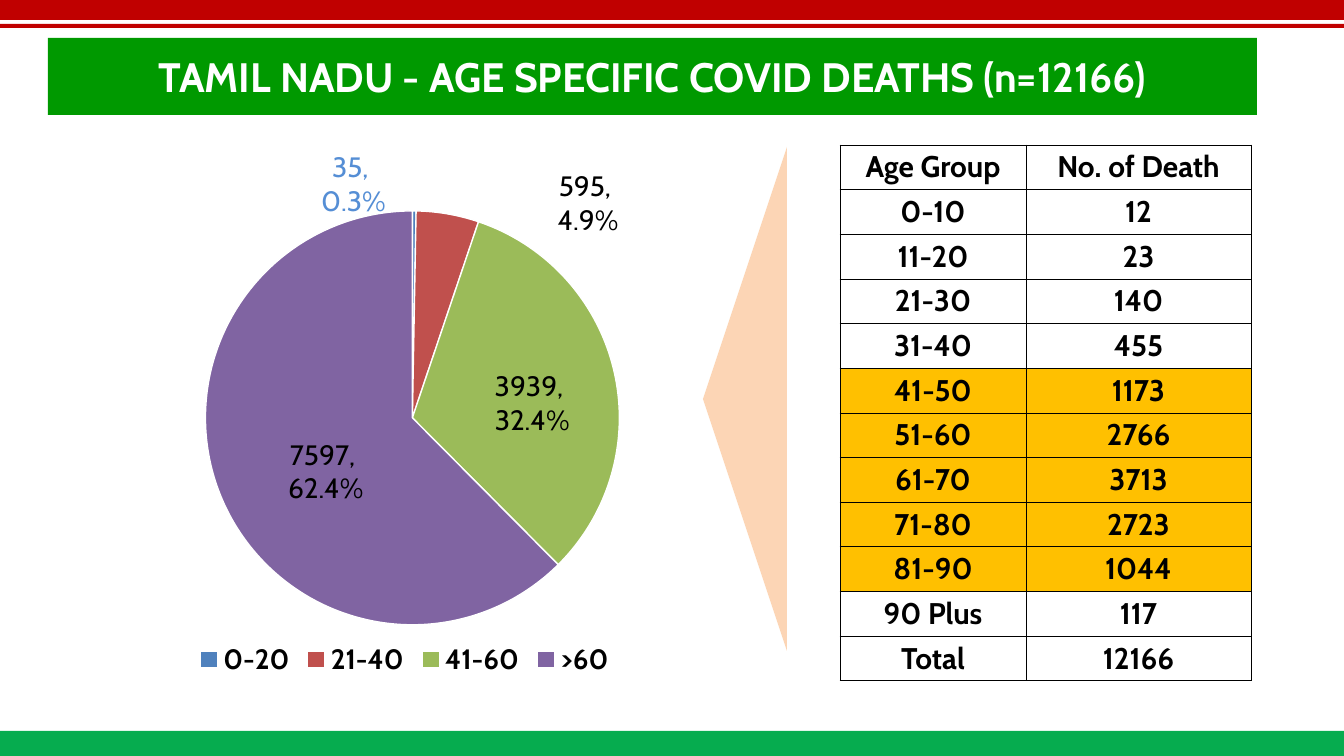
import pptx
import pptx.util
from lxml import etree
from pptx.chart.data import CategoryChartData
from pptx.dml.color import RGBColor
from pptx.enum.chart import XL_CHART_TYPE, XL_LABEL_POSITION, XL_LEGEND_POSITION
from pptx.enum.shapes import MSO_SHAPE
from pptx.enum.text import MSO_ANCHOR, PP_ALIGN
from pptx.oxml import parse_xml
from pptx.oxml.ns import nsdecls, qn

SCALE = 914400 / 134.4
FONT = "Cabin"
BLACK = RGBColor(0x00, 0x00, 0x00)
WHITE = RGBColor(0xFF, 0xFF, 0xFF)
RED = RGBColor(0xC0, 0x00, 0x00)
FOOTER_GREEN = RGBColor(0x06, 0xAC, 0x4F)
TITLE_GREEN = RGBColor(0x00, 0x99, 0x00)
AMBER = RGBColor(0xFF, 0xC0, 0x00)
PEACH = RGBColor(0xFC, 0xD5, 0xB5)
LABEL_BLUE = RGBColor(0x55, 0x8E, 0xD5)

CHART_WIDTH, CHART_HEIGHT = 683, 535
SLICES = [
    ("0-20", 35, "0.3%", RGBColor(0x4F, 0x81, 0xBD), LABEL_BLUE, (-60, -130)),
    ("21-40", 595, "4.9%", RGBColor(0xC0, 0x50, 0x4D), BLACK, (158, -112)),
    ("41-60", 3939, "32.4%", RGBColor(0x9B, 0xBB, 0x59), BLACK, (19, 9)),
    (">60", 7597, "62.4%", RGBColor(0x80, 0x64, 0xA2), BLACK, (9, 15)),
]
AGE_ROWS = [
    ("Age Group", "No. of Death"),
    ("0-10", "12"),
    ("11-20", "23"),
    ("21-30", "140"),
    ("31-40", "455"),
    ("41-50", "1173"),
    ("51-60", "2766"),
    ("61-70", "3713"),
    ("71-80", "2723"),
    ("81-90", "1044"),
    ("90 Plus", "117"),
    ("Total", "12166"),
]
HIGHLIGHTED_ROWS = range(5, 10)


def px(length):
    return round(length * SCALE)


def set_font(font, size, color, bold=True):
    font.name = FONT
    font.size = pptx.util.Pt(size)
    font.bold = bold
    font.color.rgb = color


def add_filled_shape(slide, kind, left, top, width, height, color):
    shape = slide.shapes.add_shape(kind, px(left), px(top), px(width), px(height))
    shape.shadow.inherit = False
    shape.fill.solid()
    shape.fill.fore_color.rgb = color
    shape.line.fill.background()
    return shape


def write_centered(text_frame, text, size, color):
    text_frame.text = text
    paragraph = text_frame.paragraphs[0]
    paragraph.alignment = PP_ALIGN.CENTER
    set_font(paragraph.font, size, color)


def add_title(slide, text):
    title = add_filled_shape(slide, MSO_SHAPE.RECTANGLE, 48, 38, 1209, 77, TITLE_GREEN)
    title.text_frame.vertical_anchor = MSO_ANCHOR.MIDDLE
    write_centered(title.text_frame, text, 22, WHITE)


def add_borders(cell):
    properties = cell._tc.get_or_add_tcPr()
    for side in ("lnL", "lnR", "lnT", "lnB"):
        line = etree.SubElement(properties, qn(f"a:{side}"), w="6350")
        fill = etree.SubElement(line, qn("a:solidFill"))
        etree.SubElement(fill, qn("a:srgbClr"), val=str(BLACK))


def add_age_table(slide):
    frame = slide.shapes.add_table(len(AGE_ROWS), 2, px(840), px(145), px(411), px(536))
    table = frame.table
    table.first_row = False
    table.horz_banding = False
    for column, width in zip(table.columns, (186, 225)):
        column.width = px(width)
    for row_index, texts in enumerate(AGE_ROWS):
        for column_index, text in enumerate(texts):
            cell = table.cell(row_index, column_index)
            cell.margin_left = cell.margin_right = 0
            cell.margin_top = cell.margin_bottom = 0
            cell.vertical_anchor = MSO_ANCHOR.MIDDLE
            write_centered(cell.text_frame, text, 16, BLACK)
            add_borders(cell)
            if row_index in HIGHLIGHTED_ROWS:
                cell.fill.solid()
                cell.fill.fore_color.rgb = AMBER
            else:
                cell.fill.background()


def manual_layout(**settings):
    items = "".join(f'<c:{name} val="{value}"/>' for name, value in settings.items())
    return parse_xml(
        f'<c:layout {nsdecls("c")}><c:manualLayout>{items}</c:manualLayout></c:layout>'
    )


def place_plot(chart):
    plot_area = chart._chartSpace.chart.plotArea
    for layout in plot_area.findall(qn("c:layout")):
        plot_area.remove(layout)
    plot_area.insert(0, manual_layout(
        layoutTarget="inner", xMode="edge", yMode="edge",
        x=142 / CHART_WIDTH, y=64 / CHART_HEIGHT,
        w=415 / CHART_WIDTH, h=414 / CHART_HEIGHT,
    ))


def show_labels(series):
    labels = series.data_labels
    labels.show_value = True
    labels.show_percentage = True
    labels.position = XL_LABEL_POSITION.CENTER
    for leader_lines in labels._element.findall(qn("c:showLeaderLines")):
        leader_lines.set("val", "0")


def label_slice(point, text, color, offset):
    label = point.data_label
    label.text_frame.text = text
    for paragraph in label.text_frame.paragraphs:
        for run in paragraph.runs:
            set_font(run.font, 15, color, bold=False)
    label.position = XL_LABEL_POSITION.CENTER
    label._dLbl.find(qn("c:showPercent")).set("val", "1")
    x, y = offset
    label._dLbl.insert(1, manual_layout(x=x / CHART_WIDTH, y=y / CHART_HEIGHT))


def add_age_pie(slide):
    data = CategoryChartData(number_format="0")
    data.categories = [name for name, *_ in SLICES]
    data.add_series("Series 1", [value for _, value, *_ in SLICES])
    chart = slide.shapes.add_chart(
        XL_CHART_TYPE.PIE, px(63), px(147), px(CHART_WIDTH), px(CHART_HEIGHT), data
    ).chart
    chart.has_title = False
    set_font(chart.font, 15, BLACK)
    chart.has_legend = True
    chart.legend.position = XL_LEGEND_POSITION.BOTTOM
    chart.legend.include_in_layout = False
    place_plot(chart)
    plot = chart.plots[0]
    plot.vary_by_categories = True
    series = plot.series[0]
    show_labels(series)
    for index, (_, value, share, fill, label_color, offset) in enumerate(SLICES):
        point = series.points[index]
        point.format.fill.solid()
        point.format.fill.fore_color.rgb = fill
        point.format.line.color.rgb = WHITE
        point.format.line.width = pptx.util.Pt(0.75)
        label_slice(point, f"{value}, \n{share}", label_color, offset)


def add_pointer(slide):
    pointer = add_filled_shape(
        slide, MSO_SHAPE.ISOSCELES_TRIANGLE, 493, 357, 504, 84, PEACH
    )
    pointer.rotation = 270


def main():
    presentation = pptx.Presentation()
    presentation.slide_width = px(1344)
    presentation.slide_height = px(756)
    slide = presentation.slides.add_slide(presentation.slide_layouts[6])
    for top, height, color in ((731, 25, FOOTER_GREEN), (0, 20, RED), (24, 4, RED)):
        add_filled_shape(slide, MSO_SHAPE.RECTANGLE, 0, top, 1344, height, color)
    add_title(slide, "TAMIL NADU - AGE SPECIFIC COVID DEATHS (n=12166)")
    add_age_table(slide)
    add_age_pie(slide)
    add_pointer(slide)
    presentation.save("out.pptx")


if __name__ == "__main__":
    main()
